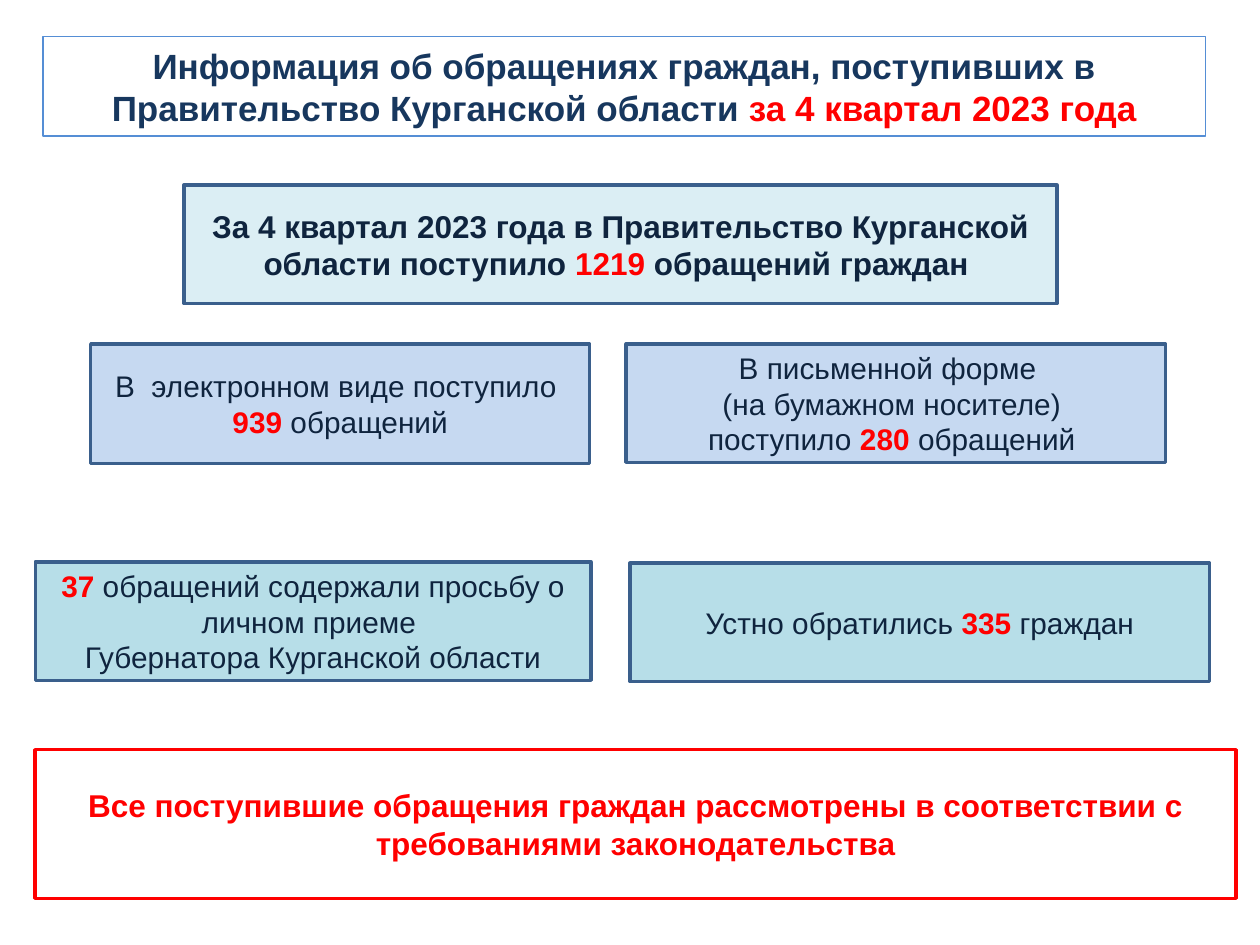
from pptx import Presentation
from pptx.dml.color import RGBColor
from pptx.enum.shapes import MSO_SHAPE
from pptx.enum.text import MSO_ANCHOR, MSO_AUTO_SIZE, PP_ALIGN
from pptx.util import Inches, Pt

RECT = MSO_SHAPE.RECTANGLE
MID = MSO_ANCHOR.MIDDLE
FIXED = MSO_AUTO_SIZE.NONE
CENTER = PP_ALIGN.CENTER

UNIT = Inches(0.1)
RED = "FF0000"
NAVY = "0F243E"
EDGE = "3A5F8C"


def color(code):
    return RGBColor.from_string(code)


def span(box):
    return [round(part * UNIT) for part in box]


def write(shape, text, size=17, ink=NAVY, bold=False):
    frame = shape.text_frame
    frame.word_wrap = True
    frame.auto_size = FIXED
    frame.vertical_anchor = MID
    for row, line in enumerate(text.split("\n")):
        para = frame.paragraphs[0] if row == 0 else frame.add_paragraph()
        para.alignment = CENTER
        for turn, part in enumerate(line.split("*")):
            if not part:
                continue
            hot = turn % 2 == 1
            run = para.add_run()
            run.text = part
            run.font.name = "Arial"
            run.font.size = Pt(size)
            run.font.bold = bold or hot
            run.font.color.rgb = color(RED if hot else ink)


def paint(shape, fill, edge, width):
    if fill:
        shape.fill.solid()
        shape.fill.fore_color.rgb = color(fill)
    else:
        shape.fill.background()
    shape.line.color.rgb = color(edge)
    shape.line.width = Pt(width)


def head(slide, box, text):
    title = slide.shapes.title
    title.left, title.top, title.width, title.height = span(box)
    paint(title, None, "558ED5", 0.75)
    write(title, text, size=20, ink="17375E", bold=True)


def card(slide, box, text, fill=None, edge=EDGE, **form):
    shape = slide.shapes.add_shape(RECT, *span(box))
    shape.shadow.inherit = False
    paint(shape, fill, edge, 2)
    write(shape, text, **form)


def pair(slide, boxes, texts, fill):
    for box, text in zip(boxes, texts):
        card(slide, box, text, fill)


def main():
    deck = Presentation()
    deck.slide_width, deck.slide_height = 100 * UNIT, 75 * UNIT
    slide = deck.slides.add_slide(deck.slide_layouts[5])

    head(slide, (3.4, 2.9, 92.3, 7.9),
         "Информация об обращениях граждан, поступивших в "
         "Правительство Курганской области *за 4 квартал 2023 года*")
    card(slide, (14.6, 14.7, 69.3, 9.4),
         "За 4 квартал 2023 года в Правительство Курганской области "
         "поступило *1219 *обращений граждан ",
         "DBEEF4", size=18, bold=True)
    pair(slide, [(7.2, 27.3, 39.6, 9.5), (49.7, 27.3, 42.8, 9.4)],
         ["В  электронном виде поступило  *939 *обращений",
          "В письменной форме  \n(на бумажном носителе) \n"
          "поступило *280 *обращений "], "C6D9F1")
    pair(slide, [(2.8, 44.6, 44.1, 9.4), (50, 44.7, 46, 9.4)],
         ["*37 *обращений содержали просьбу о личном приеме \n"
          "Губернатора Курганской области",
          "Устно обратились *335 *граждан"], "B7DEE8")
    card(slide, (2.8, 59.5, 95.3, 11.8),
         "Все поступившие обращения граждан рассмотрены "
         "в соответствии с требованиями законодательства",
         edge=RED, size=18, ink=RED, bold=True)

    deck.save("out.pptx")


if __name__ == "__main__":
    main()
